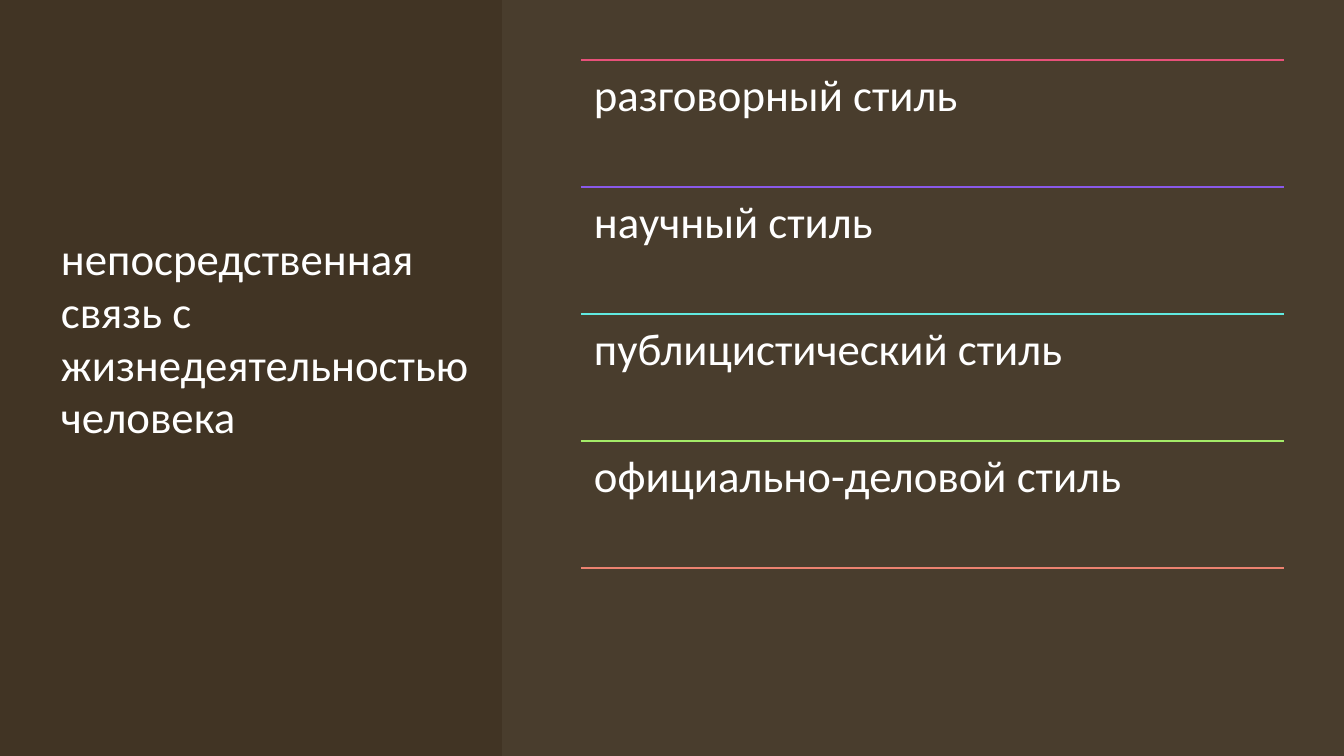
from dataclasses import dataclass

from lxml.etree import SubElement
from pptx import Presentation
from pptx.dml.color import RGBColor
from pptx.enum.shapes import MSO_CONNECTOR, MSO_SHAPE
from pptx.enum.text import MSO_ANCHOR, MSO_AUTO_SIZE, PP_ALIGN
from pptx.oxml.ns import qn
from pptx.util import Pt

SLIDE_W, SLIDE_H = 1344, 756
EMU_PER_PX = 12192000 / SLIDE_W


@dataclass(frozen=True)
class Theme:
    background: str = "413424"
    panel: str = "F0EBE5"
    panel_opacity: int = 5
    text: str = "FFFFFF"
    font: str = "Calibri"
    size: int = 32
    rule_width: int = 1
    rules: tuple = ("E8517A", "8959E9", "61EAE1", "A4EB68", "EC8270")


THEME = Theme()
TITLE = "непосредственная связь с жизнедеятельностью человека"
STYLES = (
    "разговорный стиль",
    "научный стиль",
    "публицистический стиль",
    "официально-деловой стиль",
)
LIST_LEFT, LIST_TOP, LIST_W, ROW_H = 581, 60, 703, 127


def px(*lengths):
    return [round(n * EMU_PER_PX) for n in lengths]


def rgb(value):
    return RGBColor.from_string(value)


def format_text(shape, text, spacing, insets):
    """Fill a text shape; insets are left, top, right, bottom in px."""
    tf = shape.text_frame
    tf.word_wrap = True
    tf.auto_size = MSO_AUTO_SIZE.NONE
    tf.margin_left, tf.margin_top, tf.margin_right, tf.margin_bottom = px(*insets)
    tf.text = text
    p = tf.paragraphs[0]
    p.alignment = PP_ALIGN.LEFT
    p.line_spacing = spacing
    p.font.name = THEME.font
    p.font.size = Pt(THEME.size)
    p.font.color.rgb = rgb(THEME.text)
    return tf


def add_panel(slide, left, width, color, opacity=100):
    sp = slide.shapes.add_shape(MSO_SHAPE.RECTANGLE, *px(left, 0, width, SLIDE_H))
    sp.shadow.inherit = False
    sp.line.fill.background()
    sp.fill.solid()
    sp.fill.fore_color.rgb = rgb(color)
    if opacity < 100:
        clr = sp._element.spPr.find(f".//{qn('a:srgbClr')}")
        SubElement(clr, qn("a:alpha"), val=str(opacity * 1000))
    return sp


def set_title(slide):
    title = slide.shapes.title
    title.left, title.top, title.width, title.height = px(61, 60, 460, 611)
    tf = format_text(title, TITLE, 0.98, (0, 0, 0, 53))
    tf.vertical_anchor = MSO_ANCHOR.MIDDLE
    return title


def add_rule(shapes, top, color):
    line = shapes.add_connector(
        MSO_CONNECTOR.STRAIGHT, *px(LIST_LEFT, top, LIST_LEFT + LIST_W, top)
    )
    line.line.color.rgb = rgb(color)
    line.line.width = Pt(THEME.rule_width)
    SubElement(line._element.spPr, qn("a:effectLst"))


def add_style(shapes, top, text):
    box = shapes.add_textbox(*px(LIST_LEFT, top, LIST_W, ROW_H))
    format_text(box, text, 0.9, (13, 13, 13, 13))


def add_style_list(slide):
    shapes = slide.shapes.add_group_shape().shapes
    for i, color in enumerate(THEME.rules):
        top = LIST_TOP + i * ROW_H
        add_rule(shapes, top, color)
        if i < len(STYLES):
            add_style(shapes, top, STYLES[i])


def main():
    prs = Presentation()
    prs.slide_width, prs.slide_height = px(SLIDE_W, SLIDE_H)
    slide = prs.slides.add_slide(prs.slide_layouts[5])
    slide.background.fill.solid()
    slide.background.fill.fore_color.rgb = rgb(THEME.background)

    title = set_title(slide)
    backdrop = add_panel(slide, 0, SLIDE_W, THEME.background)
    title._element.addprevious(backdrop._element)
    add_panel(slide, 502, SLIDE_W - 502, THEME.panel, THEME.panel_opacity)
    add_style_list(slide)
    prs.save("out.pptx")


if __name__ == "__main__":
    main()
